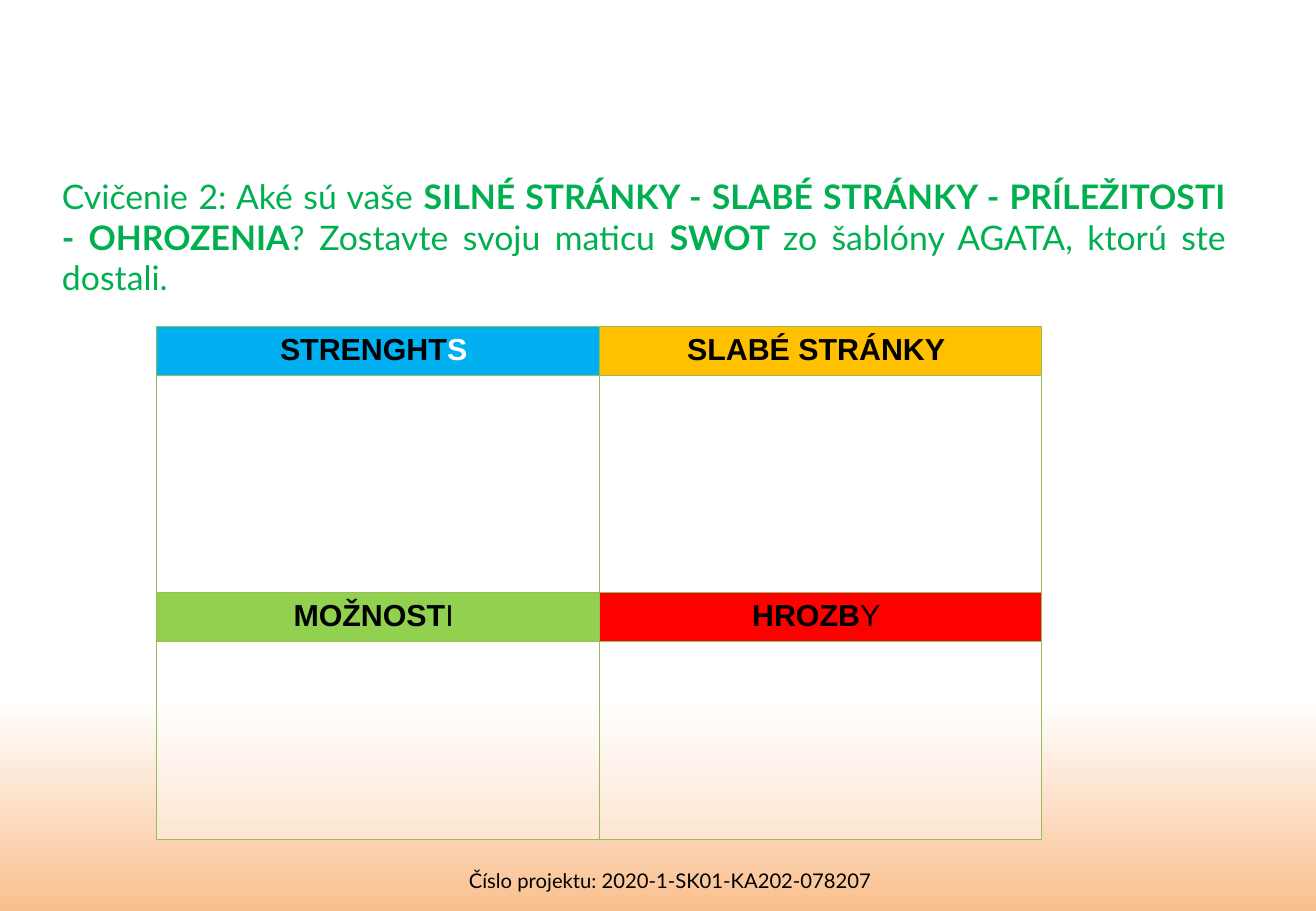
import pptx
import pptx.dml.color
import pptx.enum.text
import pptx.oxml
import pptx.oxml.ns
import pptx.util
from lxml import etree

Inches = pptx.util.Inches
Pt = pptx.util.Pt
RGBColor = pptx.dml.color.RGBColor
qn = pptx.oxml.ns.qn
PP_ALIGN = pptx.enum.text.PP_ALIGN


class Theme:
    body_font, table_font = "Lato", "Arial"
    task_size, header_size, footer_size = Pt(20), Pt(18), Pt(12)
    green, black, white = "00B050", "000000", "FFFFFF"
    border, glow = "9BBB59", "FABF8E"
    strengths, weaknesses, chances, threats = "00B0F0", "FFC000", "92D050", "FF0000"


def set_font(font, name, size, color):
    font.name = name
    font.size = size
    font.color.rgb = RGBColor.from_string(color)


def add_borders(cell):
    properties = cell._tc.get_or_add_tcPr()
    for position, side in enumerate(("lnL", "lnR", "lnT", "lnB")):
        line = pptx.oxml.parse_xml(
            f'<a:{side} {pptx.oxml.ns.nsdecls("a")} w="9525"><a:solidFill>'
            f'<a:srgbClr val="{Theme.border}"/></a:solidFill></a:{side}>')
        properties.insert(position, line)


deck = pptx.Presentation()
deck.slide_width, deck.slide_height = Inches(10.83), Inches(7.5)
page = deck.slides.add_slide(deck.slide_layouts[1])
title = page.shapes.title
title.element.getparent().remove(title.element)

# Background
background = page.background.fill
background.gradient()
background.gradient_angle = 270
stops = page.element.find(".//" + qn("a:gsLst"))
for stop in list(stops):
    stops.remove(stop)
for percent, color in ((0, Theme.white), (77, Theme.white), (100, Theme.glow)):
    stop = etree.SubElement(stops, qn("a:gs"), pos=str(percent * 1000))
    etree.SubElement(stop, qn("a:srgbClr"), val=color)

# Project number
footer = page.shapes.add_textbox(Inches(3.74), Inches(7.1), Inches(3.55), Inches(0.3))
para = footer.text_frame.paragraphs[0]
para.text = "Číslo projektu: 2020-1-SK01-KA202-078207"
para.alignment = PP_ALIGN.CENTER
set_font(para.font, Theme.body_font, Theme.footer_size, Theme.black)

# Task
task = page.placeholders[1]
task.left, task.top = Inches(0.41), Inches(1.4)
task.width, task.height = Inches(9.78), Inches(1.28)
task.text_frame.auto_size = pptx.enum.text.MSO_AUTO_SIZE.NONE
para = task.text_frame.paragraphs[0]
para.alignment = PP_ALIGN.JUSTIFY
para.space_before = Pt(0)
properties = para._p.get_or_add_pPr()
properties.set("marL", "0")
properties.set("indent", "0")
etree.SubElement(properties, qn("a:buNone"))
set_font(para.font, Theme.body_font, Theme.task_size, Theme.green)
for text, bold in (
    ("Cvičenie 2: Aké sú vaše ", False),
    ("SILNÉ STRÁNKY - SLABÉ STRÁNKY - PRÍLEŽITOSTI - OHROZENIA", True),
    ("? Zostavte svoju maticu ", False),
    ("SWOT ", True),
    ("zo šablóny AGATA, ktorú ste dostali.", False),
):
    span = para.add_run()
    span.text = text
    span.font.bold = bold

# SWOT matrix: header rows alternate with empty rows
frame = page.shapes.add_table(4, 2, Inches(1.29), Inches(2.69), Inches(7.28), Inches(4.18))
matrix = frame.table
matrix.first_row = matrix.horz_banding = False
for row, height in zip(matrix.rows, (0.38, 1.79, 0.38, 1.63)):
    row.height = Inches(height)

# Row, column, fill, then runs of text, bold, colour
headers = (
    (0, 0, Theme.strengths, (("STRENGHT", True, Theme.black), ("S ", True, Theme.white))),
    (0, 1, Theme.weaknesses, (("SLABÉ STRÁNKY ", True, Theme.black),)),
    (2, 0, Theme.chances, (("MOŽNOST", True, Theme.black), ("I ", False, Theme.black))),
    (2, 1, Theme.threats, (("HROZB", True, Theme.black), ("Y ", False, Theme.black))),
)
for row, column, fill, spans in headers:
    header = matrix.cell(row, column)
    header.fill.solid()
    header.fill.fore_color.rgb = RGBColor.from_string(fill)
    para = header.text_frame.paragraphs[0]
    para.alignment = PP_ALIGN.CENTER
    for text, bold, color in spans:
        span = para.add_run()
        span.text = text
        span.font.bold = bold
        set_font(span.font, Theme.table_font, Theme.header_size, color)

    answer = matrix.cell(row + 1, column)
    answer.fill.solid()
    answer.fill.fore_color.rgb = RGBColor.from_string(Theme.white)
    white = answer._tc.tcPr.find(".//" + qn("a:srgbClr"))
    etree.SubElement(white, qn("a:alpha"), val="40000")
    for cell in (header, answer):
        add_borders(cell)

deck.save("out.pptx")
